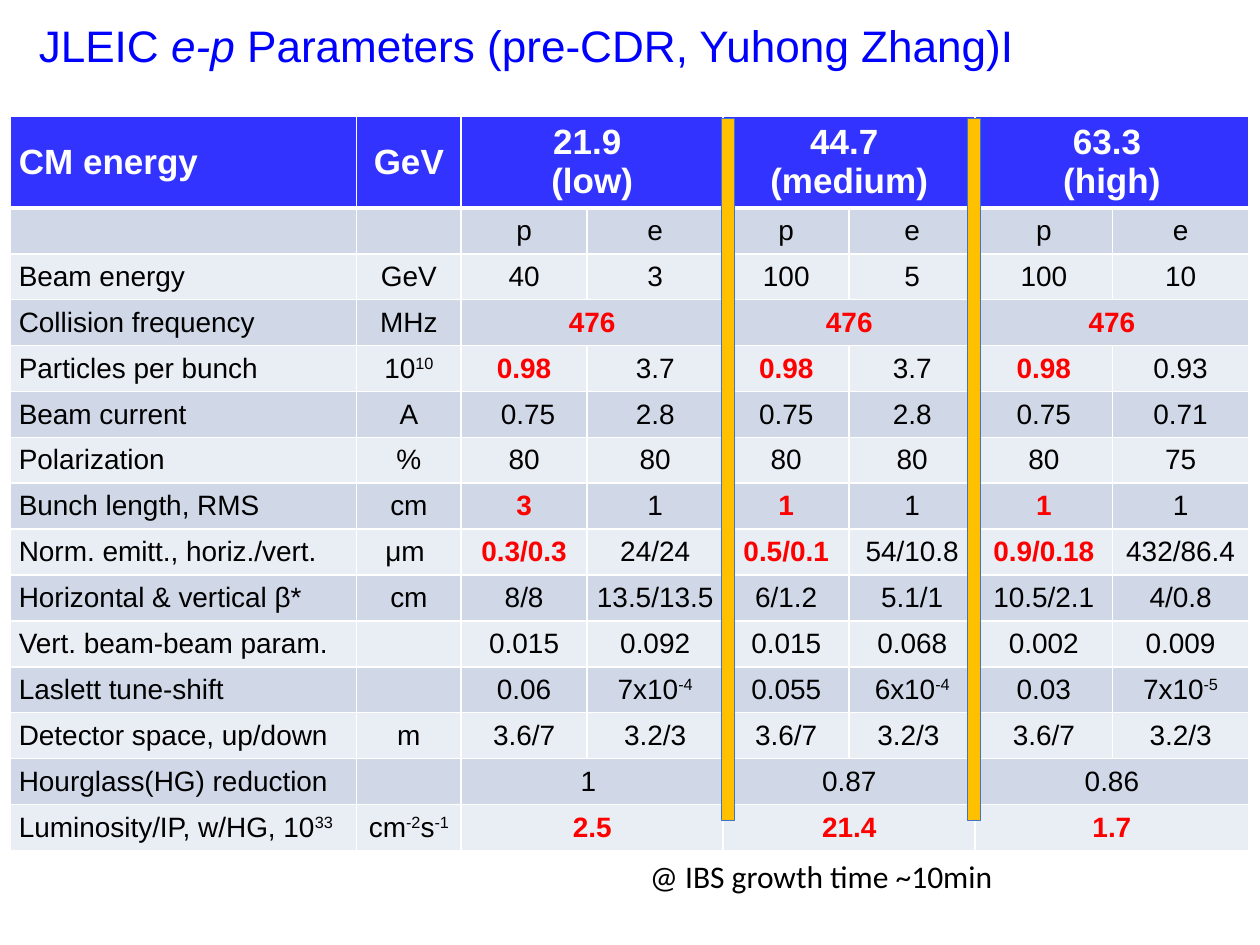
from dataclasses import dataclass
from lxml.etree import SubElement
from pptx import Presentation
from pptx.dml.color import RGBColor as RGB
from pptx.enum.shapes import MSO_SHAPE as SHAPE
from pptx.enum.text import MSO_ANCHOR as ANCHOR, MSO_AUTO_SIZE as AUTO, PP_ALIGN as ALIGN
from pptx.oxml.ns import qn
from pptx.util import Inches, Pt


@dataclass(frozen=True)
class Theme:
    table_font: str = "Arial"
    caption_font: str = "Calibri"
    title: str = "0000FF"
    header: str = "3333FF"
    bands: tuple = ("D0D8E8", "E9EDF4")
    white: str = "FFFFFF"
    ink: str = "000000"
    accent: str = "FF0000"
    divider: str = "FFC000"
    divider_line: str = "4472C4"
    title_size: float = 25.2
    header_size: int = 20
    body_size: int = 16
    caption_size: int = 18


THEME = Theme()
TITLE = [("JLEIC ", False), ("e-p", True), (" Parameters (pre-CDR, Yuhong Zhang)I", False)]
CAPTION = "@ IBS growth time ~10min"

ACCENT_MARK = "!"
SUPER_MARK = "^"
ROWS = [
    ("CM energy", "GeV", "21.9 \n(low)", "44.7 \n(medium)", "63.3 \n(high)"),
    ("", "", "p", "e", "p", "e", "p", "e"),
    ("Beam energy", "GeV", "40", "3", "100", "5", "100", "10"),
    ("Collision frequency", "MHz", "!476", "!476", "!476"),
    ("Particles per bunch", "10^10", "!0.98", "3.7", "!0.98", "3.7", "!0.98", "0.93"),
    ("Beam current", "A", " 0.75", "2.8", "0.75", "2.8", "0.75", "0.71"),
    ("Polarization", "%", "80", "80", "80", "80", "80", "75"),
    ("Bunch length, RMS", "cm", "!3", "1", "!1", "1", "!1", "1"),
    ("Norm. emitt., horiz./vert.", "μm ", "!0.3/0.3", "24/24", "!0.5/0.1", "54/10.8",
     "!0.9/0.18", "432/86.4"),
    ("Horizontal & vertical β*", "cm", "8/8", "13.5/13.5", "6/1.2", "5.1/1", "10.5/2.1", "4/0.8"),
    ("Vert. beam-beam param.", "", "0.015", "0.092", "0.015", "0.068", "0.002", "0.009"),
    ("Laslett tune-shift", "", "0.06", "7x10^-4", "0.055", "6x10^-4", "0.03", "7x10^-5"),
    ("Detector space, up/down", "m", "3.6/7", "3.2/3", "3.6/7", "3.2/3 ", "3.6/7", "3.2/3"),
    ("Hourglass(HG) reduction", "", "1 ", "0.87", "0.86"),
    ("Luminosity/IP, w/HG, 10^33", "cm^-2^s^-1", "!2.5", "!21.4", "!1.7"),
]
COLUMN_WIDTHS = [2.75, 0.83, 1, 1.08, 1, 1, 1.09, 1.08]
LABEL_COLUMNS = 2
TABLE_LEFT, TABLE_TOP, TABLE_HEIGHT, HEADER_HEIGHT = 0.08, 0.92, 5.83, 0.73
DIVIDER_LEFTS = [5.73, 7.68]


def add_run(paragraph, text, font, size, color, bold=False, italic=False):
    run = paragraph.add_run()
    run.text = text
    run.font.name = font
    run.font.size = Pt(size)
    run.font.bold = bold
    run.font.italic = italic
    run.font.color.rgb = RGB.from_string(color)
    return run


def set_borders(cell, row):
    properties = cell._tc.get_or_add_tcPr()
    for side in "LRTB":
        thick = (row, side) in ((0, "B"), (1, "T"))
        line = SubElement(properties, qn(f"a:ln{side}"), w=str(Pt(3 if thick else 1)))
        fill = SubElement(line, qn("a:solidFill"))
        SubElement(fill, qn("a:srgbClr"), val=THEME.white)


def style_cell(cell, row):
    set_borders(cell, row)
    cell.fill.solid()
    cell.fill.fore_color.rgb = RGB.from_string(
        THEME.header if row == 0 else THEME.bands[(row - 1) % 2])
    cell.vertical_anchor = ANCHOR.MIDDLE
    cell.margin_left = cell.margin_right = Inches(0.07)
    cell.margin_top = cell.margin_bottom = 0


def write_cell(cell, entry, row, column):
    accented = entry.startswith(ACCENT_MARK)
    size = THEME.body_size if row else THEME.header_size
    color = THEME.accent if accented else THEME.ink if row else THEME.white
    frame = cell.text_frame
    for index, line in enumerate(entry.removeprefix(ACCENT_MARK).split("\n")):
        paragraph = frame.add_paragraph() if index else frame.paragraphs[0]
        paragraph.alignment = ALIGN.CENTER if column else ALIGN.LEFT
        for part, text in enumerate(line.split(SUPER_MARK)):
            if text:
                run = add_run(paragraph, text, THEME.table_font, size, color,
                              bold=accented or row == 0)
                if part % 2:
                    run._r.get_or_add_rPr().set("baseline", "30000")


def add_parameters(slide):
    columns = len(COLUMN_WIDTHS)
    table = slide.shapes.add_table(
        len(ROWS), columns, Inches(TABLE_LEFT), Inches(TABLE_TOP),
        Inches(sum(COLUMN_WIDTHS)), Inches(TABLE_HEIGHT)).table
    for column, width in zip(table.columns, COLUMN_WIDTHS):
        column.width = Inches(width)
    body_height = (TABLE_HEIGHT - HEADER_HEIGHT) / (len(ROWS) - 1)
    for row, entries in enumerate(ROWS):
        table.rows[row].height = Inches(body_height if row else HEADER_HEIGHT)
        for column in range(columns):
            style_cell(table.cell(row, column), row)
        span = (columns - LABEL_COLUMNS) // (len(entries) - LABEL_COLUMNS)
        for index, entry in enumerate(entries):
            column = index + max(0, index - LABEL_COLUMNS) * (span - 1)
            cell = table.cell(row, column)
            if span > 1 and index >= LABEL_COLUMNS:
                cell.merge(table.cell(row, column + span - 1))
            write_cell(cell, entry, row, column)


def add_title(slide):
    title = slide.shapes.add_textbox(Inches(0.21), Inches(0.12), Inches(8.52), Inches(0.53))
    frame = title.text_frame
    frame.word_wrap = True
    frame.vertical_anchor = ANCHOR.MIDDLE
    frame.paragraphs[0].line_spacing = 0.9
    for text, italic in TITLE:
        add_run(frame.paragraphs[0], text, THEME.table_font, THEME.title_size, THEME.title,
                italic=italic)


def add_dividers(slide):
    for left in DIVIDER_LEFTS:
        divider = slide.shapes.add_shape(
            SHAPE.RECTANGLE, Inches(left), Inches(0.94), Inches(0.1), Inches(5.57))
        divider.shadow.inherit = False
        divider.fill.solid()
        divider.fill.fore_color.rgb = RGB.from_string(THEME.divider)
        divider.line.color.rgb = RGB.from_string(THEME.divider_line)
        divider.line.width = Pt(0.5)


def add_caption(slide):
    caption = slide.shapes.add_textbox(Inches(5.06), Inches(6.75), Inches(3.27), Inches(0.4))
    caption.fill.solid()
    caption.fill.fore_color.rgb = RGB.from_string(THEME.white)
    frame = caption.text_frame
    frame.word_wrap = True
    frame.auto_size = AUTO.SHAPE_TO_FIT_TEXT
    add_run(frame.paragraphs[0], CAPTION, THEME.caption_font, THEME.caption_size, THEME.ink)


def main():
    deck = Presentation()
    deck.slide_width, deck.slide_height = Inches(10), Inches(7.5)
    slide = deck.slides.add_slide(deck.slide_layouts[6])
    add_title(slide)
    add_parameters(slide)
    add_dividers(slide)
    add_caption(slide)
    deck.save("out.pptx")


if __name__ == "__main__":
    main()
